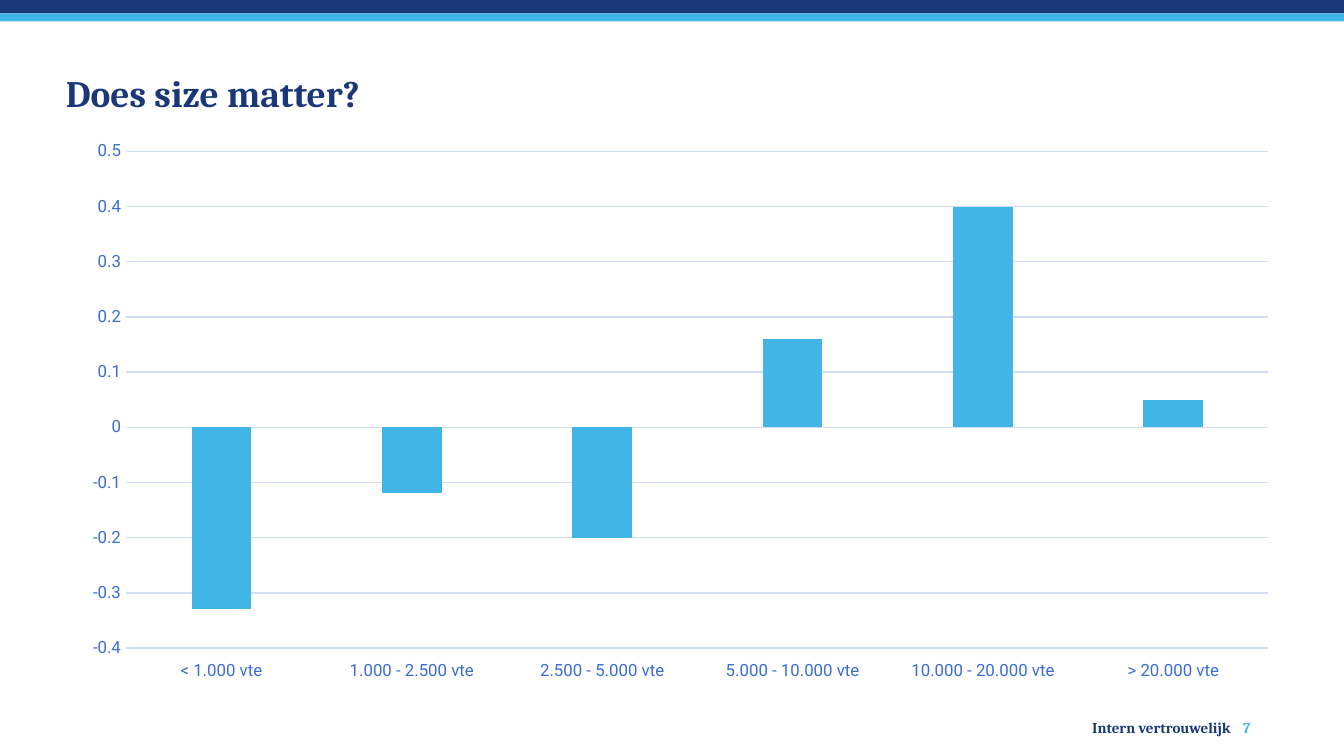
from dataclasses import dataclass

from pptx import Presentation
from pptx.chart.data import CategoryChartData
from pptx.dml.color import RGBColor
from pptx.enum.chart import XL_CHART_TYPE, XL_TICK_LABEL_POSITION, XL_TICK_MARK
from pptx.enum.shapes import MSO_SHAPE
from pptx.enum.text import MSO_ANCHOR, PP_ALIGN
from pptx.util import Inches, Pt


@dataclass(frozen=True)
class Theme:
    navy: RGBColor = RGBColor(0x1A, 0x38, 0x77)
    sky: RGBColor = RGBColor(0x41, 0xB6, 0xE6)
    label: RGBColor = RGBColor(0x3C, 0x6D, 0xD4)
    grid: RGBColor = RGBColor(0xD2, 0xDD, 0xF5)
    serif: str = "Cambria"
    sans: str = "Roboto"
    title_size: float = 20
    footer_size: float = 8
    chart_size: float = 10
    axis_size: float = 9
    line_width: float = 0.75


THEME = Theme()
SIZE_EFFECT = {
    "< 1.000 vte": -0.33,
    "1.000 - 2.500 vte": -0.12,
    "2.500 - 5.000 vte": -0.2,
    "5.000 - 10.000 vte": 0.16,
    "10.000 - 20.000 vte": 0.4,
    "> 20.000 vte": 0.05,
}


def style_font(font, name, size, color, bold=False):
    font.name = name
    font.size = Pt(size)
    font.color.rgb = color
    font.bold = bold


def style_line(line):
    line.color.rgb = THEME.grid
    line.width = Pt(THEME.line_width)


def add_band(page, top, height, color):
    band = page.shapes.add_shape(
        MSO_SHAPE.RECTANGLE, 0, Inches(top), Inches(10), Inches(height))
    band.shadow.inherit = False
    band.fill.solid()
    band.fill.fore_color.rgb = color
    band.line.fill.background()


def add_text(page, text, at, size, color, margins=(0, 0, 0, 0),
             align=PP_ALIGN.LEFT, anchor=MSO_ANCHOR.MIDDLE, wrap=True):
    """Add a bold serif line; margins run left, top, right, bottom."""
    box = page.shapes.add_textbox(*map(Inches, at))
    frame = box.text_frame
    frame.margin_left, frame.margin_top, frame.margin_right, frame.margin_bottom = map(
        Inches, margins)
    frame.word_wrap = wrap
    frame.vertical_anchor = anchor
    frame.text = text
    para = frame.paragraphs[0]
    para.alignment = align
    style_font(para.runs[0].font, THEME.serif, size, color, bold=True)


def style_axis(axis):
    axis.major_tick_mark = XL_TICK_MARK.NONE
    axis.minor_tick_mark = XL_TICK_MARK.NONE
    style_font(axis.tick_labels.font, THEME.sans, THEME.axis_size, THEME.label)


def add_size_chart(page, at):
    data = CategoryChartData()
    data.categories = list(SIZE_EFFECT)
    data.add_series("Series 1", list(SIZE_EFFECT.values()))
    chart = page.shapes.add_chart(
        XL_CHART_TYPE.COLUMN_CLUSTERED, *map(Inches, at), data).chart
    chart.has_title = False
    chart.has_legend = False
    style_font(chart.font, THEME.sans, THEME.chart_size, THEME.navy)

    plot = chart.plots[0]
    plot.gap_width = 219
    plot.overlap = -27
    plot.vary_by_categories = False
    bars = plot.series[0]
    bars.invert_if_negative = False
    bars.format.fill.solid()
    bars.format.fill.fore_color.rgb = THEME.sky

    categories = chart.category_axis
    style_axis(categories)
    categories.tick_label_position = XL_TICK_LABEL_POSITION.LOW
    style_line(categories.format.line)

    values = chart.value_axis
    style_axis(values)
    values.minimum_scale = -0.4
    values.maximum_scale = 0.5
    values.major_unit = 0.1
    values.format.line.fill.background()
    values.has_major_gridlines = True
    style_line(values.major_gridlines.format.line)


def main():
    deck = Presentation()
    deck.slide_width = Inches(10)
    deck.slide_height = Inches(10 * 9 / 16)
    page = deck.slides.add_slide(deck.slide_layouts[6])

    add_band(page, 0, 0.1, THEME.navy)
    add_band(page, 0.1, 0.06, THEME.sky)
    add_text(page, "Intern vertrouwelijk", (5.74, 5.31, 3.46, 0.21),
             THEME.footer_size, THEME.navy, margins=(0.04, 0.04, 0.04, 0.04),
             align=PP_ALIGN.RIGHT, anchor=MSO_ANCHOR.TOP)
    add_text(page, "Does size matter?", (0.45, 0.52, 9.12, 0.34),
             THEME.title_size, THEME.navy, margins=(0.04, 0, 0.1, 0))
    add_text(page, "7", (9.25, 5.33, 0.3, 0.17),
             THEME.footer_size, THEME.sky, wrap=False)
    add_size_chart(page, (0.51, 0.97, 9.11, 4.18))

    deck.save("out.pptx")


if __name__ == "__main__":
    main()
